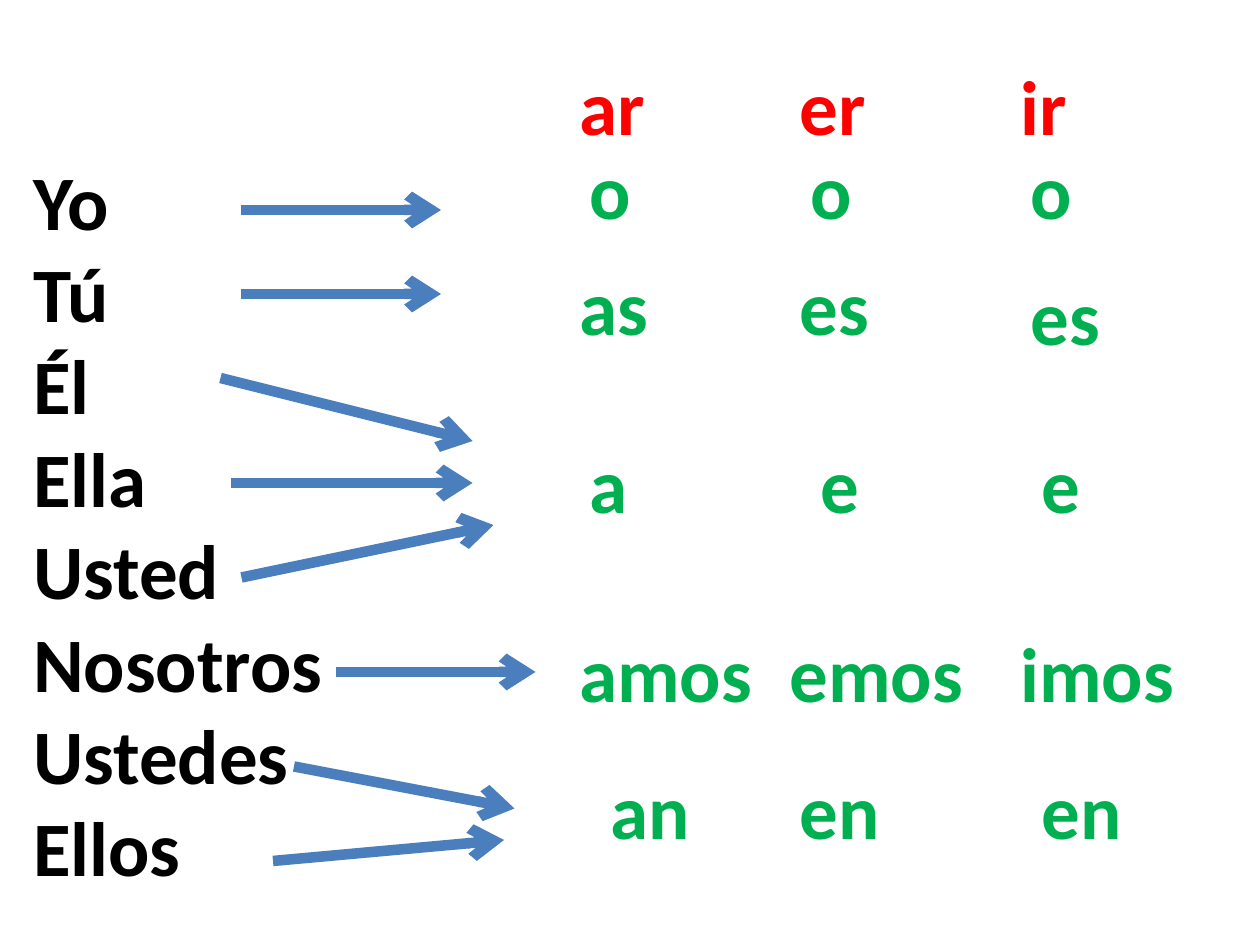
from dataclasses import dataclass

from pptx import Presentation
from pptx.dml.color import RGBColor
from pptx.enum.shapes import MSO_CONNECTOR as Connector
from pptx.enum.text import MSO_AUTO_SIZE as AutoSize
from pptx.oxml.ns import qn
from pptx.util import Inches, Pt
from lxml.etree import SubElement


@dataclass(frozen=True)
class Theme:
    """Colours, type and line sizes of the deck."""
    font: str = "Calibri"
    size: int = 44
    arrow_width: int = 6
    pronoun: str = "000000"
    heading: str = "FF0000"
    ending: str = "00B050"
    arrow: str = "4B7EBC"


THEME = Theme()
COLUMNS, ROWS = 120, 90
UNIT = Inches(10) / COLUMNS
PRONOUNS = ["Yo", "Tú", "Él", "Ella", "Usted", "Nosotros", "Ustedes", "Ellos"]
ARROWS = [
    ((21, 6), (40, 6)),
    ((21, 14), (40, 14)),
    ((30, 50), (49, 50)),
    ((19, 22), (43, 28)),
    ((20, 32), (43, 32)),
    ((21, 41), (45, 36)),
    ((24, 68), (46, 66)),
    ((26, 59), (47, 63)),
]
VERB_COLUMN = 21
NARROW, WIDE = 11, 19
ENDINGS = [
    (0, NARROW, THEME.heading, [("ar", 0, 0), ("er", 0, 0), ("ir", 0, 0)]),
    (8, NARROW, THEME.ending, [("o", 1, 0), ("o", 1, 0), ("o", 1, 0)]),
    (19, NARROW, THEME.ending, [("as", 0, 0), ("es", 0, 0), ("es", 1, 1)]),
    (36, NARROW, THEME.ending, [("a", 1, 0), ("e", 2, 0), ("e", 2, 0)]),
    (54, WIDE, THEME.ending, [("amos", 0, 0), ("emos", -1, 0), ("imos", 0, 0)]),
    (67, NARROW, THEME.ending, [("an", 3, 0), ("en", 0, 0), ("en", 2, 0)]),
]


def grid(count):
    """Turn grid columns or rows into a length."""
    return round(count * UNIT)


def add_text(page, lines, box, *, color, wrap=True):
    """Place bold lines of text in a box of grid units."""
    shape = page.shapes.add_textbox(*map(grid, box))
    frame = shape.text_frame
    frame.word_wrap = wrap
    frame.auto_size = AutoSize.SHAPE_TO_FIT_TEXT
    for index, line in enumerate(lines):
        para = frame.add_paragraph() if index else frame.paragraphs[0]
        span = para.add_run()
        span.text = line
        span.font.name = THEME.font
        span.font.size = Pt(THEME.size)
        span.font.bold = True
        span.font.color.rgb = RGBColor.from_string(color)


def add_arrow(page, start, end):
    """Draw one open-headed arrow between two grid points."""
    arrow = page.shapes.add_connector(Connector.STRAIGHT, *map(grid, start + end))
    arrow.line.width = Pt(THEME.arrow_width)
    arrow.line.color.rgb = RGBColor.from_string(THEME.arrow)
    properties = arrow.line._get_or_add_ln()
    SubElement(properties, qn("a:tailEnd"), type="arrow")
    SubElement(arrow._element.spPr, qn("a:effectLst"))


def add_pronouns(page, box):
    """List the subject pronouns, one to a line."""
    add_text(page, PRONOUNS, box, color=THEME.pronoun, wrap=False)


def add_arrows(page, box):
    """Lead each pronoun towards its row of endings."""
    left, top, _, _ = box
    for start, end in ARROWS:
        add_arrow(page, *((left + x, top + y) for x, y in (start, end)))


def add_endings(page, box):
    """Set the verb endings in columns under their headings."""
    left, top, _, _ = box
    for row, width, color, cells in ENDINGS:
        for column, (ending, right, down) in enumerate(cells):
            place = (left + column * VERB_COLUMN + right, top + row + down, width, 10)
            add_text(page, [ending], place, color=color)


def add_conjugation_page(deck):
    """Build the page of pronouns, arrows and endings."""
    page = deck.slides.add_slide(deck.slide_layouts[6])
    add_pronouns(page, (2, 14, 30, 76))
    add_arrows(page, (2, 14, 47, 76))
    add_endings(page, (54, 5, 61, 77))


def main():
    """Create and save the deck."""
    deck = Presentation()
    deck.slide_width, deck.slide_height = grid(COLUMNS), grid(ROWS)
    add_conjugation_page(deck)
    deck.save("out.pptx")


if __name__ == "__main__":
    main()
